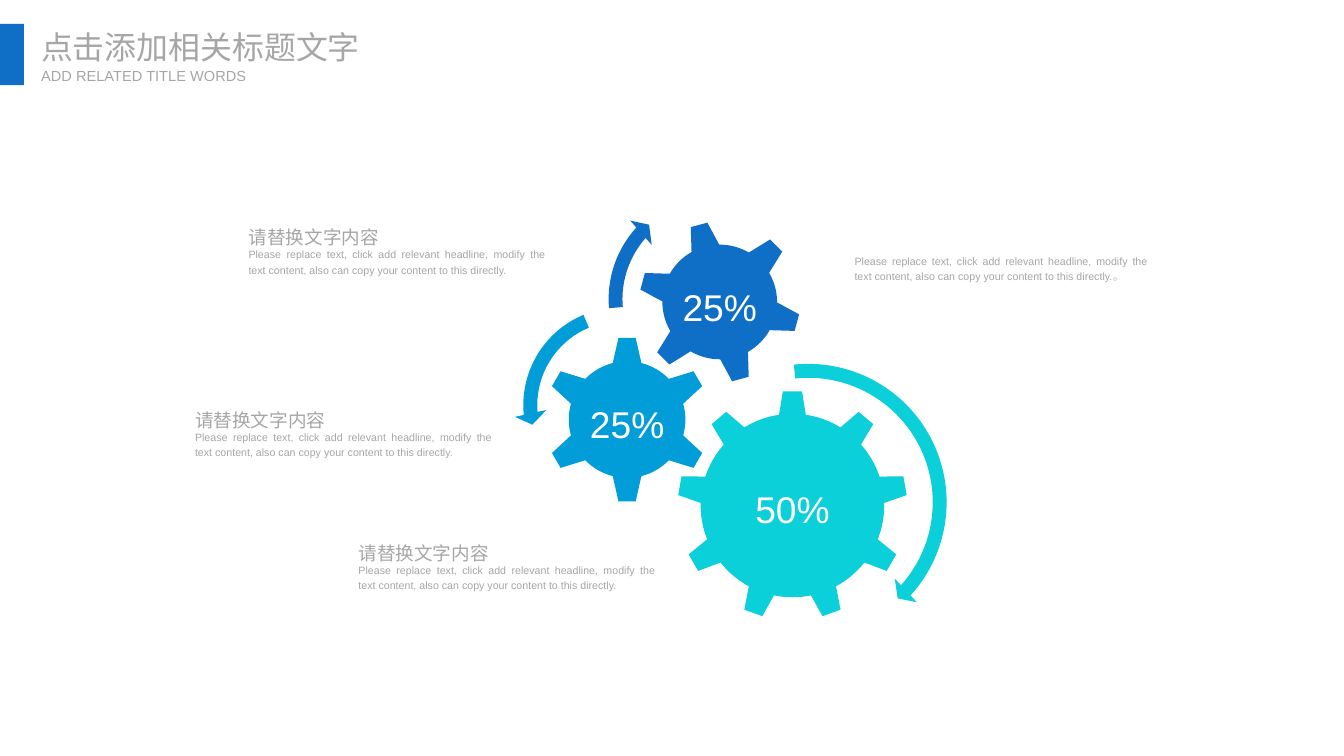
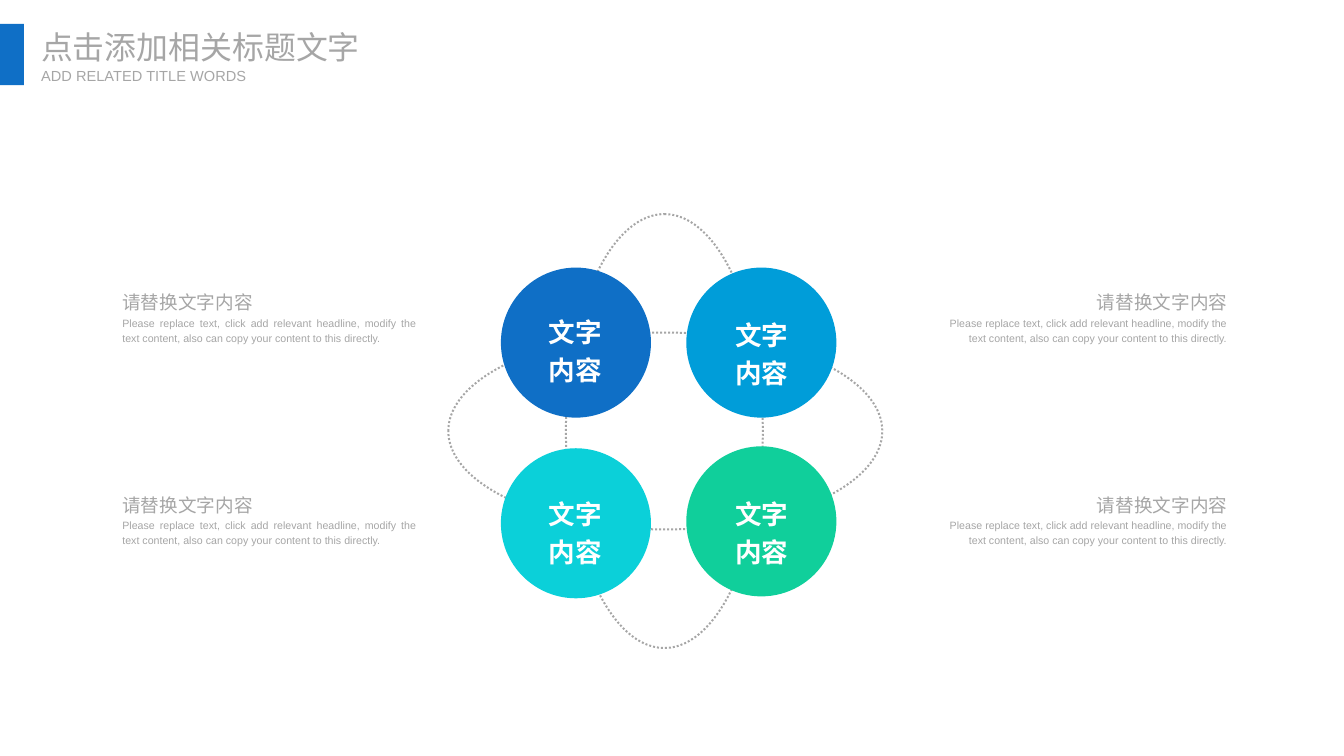
import math

import pptx
import pptx.dml.color
import pptx.enum.dml
import pptx.enum.shapes
import pptx.enum.text
import pptx.util

SHAPE = pptx.enum.shapes.MSO_SHAPE
ALIGN = pptx.enum.text.PP_ALIGN
ANCHOR = pptx.enum.text.MSO_ANCHOR
QN = pptx.oxml.ns.qn

PX = 9144  # EMU per px, 100 px to the inch
SLIDE_SIZE = (1406, 791)
COLORS = {"blue": "0F6FC6", "sky": "009DD9", "teal": "0BD0D9",
          "green": "10CF9B", "gray": "A6A6A6", "white": "FFFFFF"}
LATIN, CJK = "Arial", "Noto Sans CJK SC"

# Content
TITLE = "点击添加相关标题文字"
SUBTITLE = "ADD RELATED TITLE WORDS"
HEADING = "请替换文字内容"
BODY = ("Please replace text, click add relevant headline, modify the text content, "
        "also can copy your content to this directly.")
CIRCLE_LABEL = "文字内容"

# label, color, center, teeth, first tooth angle, body radius, tip radius, root and tip half widths
GEARS = [
    ("50%", "teal", (829, 529), 9, 0, 96, 120, 14, 10),
    ("25%", "sky", (656, 439), 6, 0, 61, 86, 15, 9),
    ("25%", "blue", (753, 316), 6, -15, 60, 84, 15, 9),
]
# preset, color, left, top, size, thickness %, head angle, end angle, start angle, head width %
ARROWS = [
    (SHAPE.CIRCULAR_ARROW, "teal", 691, 371, 309, 4.7, 4.98, 42.09, 264.03, 5.5),
    (SHAPE.LEFT_CIRCULAR_ARROW, "sky", 538, 312, 224, 6.5, 7.17, 174.82, 247.3, 7.5),
    (SHAPE.CIRCULAR_ARROW, "blue", 627, 192, 242, 6, 6.57, 221.9, 175.14, 7),
]
# left, top of the captions beside the gears
GEAR_CAPTIONS = [(260, 232), (204, 423), (375, 562)]
# color, circle left and top, label center and top
CIRCLES = [
    ("blue", 524, 280, 602, 319),
    ("sky", 718, 280, 797, 322),
    ("green", 718, 467, 797, 509),
    ("teal", 524, 469, 602, 509),
]
# heading top, body top
CAPTION_ROWS = [(300, 329), (512, 540)]
CAPTION_COLUMNS = [(128, 308, ALIGN.JUSTIFY), (982, 302, ALIGN.RIGHT)]


def px(*lengths):
    return [pptx.util.Emu(round(length * PX)) for length in lengths]


def rgb(color):
    return pptx.dml.color.RGBColor.from_string(COLORS[color])


def write(frame, text, size=8, color="gray", align=ALIGN.LEFT, spacing=1.2,
          font=LATIN, bold=False, wrap=True, anchor=ANCHOR.TOP):
    frame.margin_left = frame.margin_right = frame.margin_top = frame.margin_bottom = 0
    frame.word_wrap = wrap
    frame.auto_size = pptx.enum.text.MSO_AUTO_SIZE.NONE
    frame.vertical_anchor = anchor
    paragraph = frame.paragraphs[0]
    paragraph.alignment, paragraph.line_spacing = align, spacing
    run = paragraph.add_run()
    run.text = text
    run.font.size, run.font.bold, run.font.name = pptx.util.Pt(size), bold, font
    run.font.color.rgb = rgb(color)
    east_asian = run.font._element.makeelement(QN("a:ea"), {"typeface": font})
    run.font._element.append(east_asian)


def add_text(slide, box, text, **fmt):
    write(slide.shapes.add_textbox(*px(*box)).text_frame, text, **fmt)


def paint(shape, color):
    shape.shadow.inherit = False
    shape.fill.solid()
    shape.fill.fore_color.rgb = rgb(color)
    shape.line.fill.background()
    return shape


def add_filled(slide, preset, box, color):
    return paint(slide.shapes.add_shape(preset, *px(*box)), color)


def add_caption(slide, left, top, width, body_top, align=ALIGN.JUSTIFY):
    add_text(slide, (left, top, width, 28), HEADING, size=14, align=align)
    add_text(slide, (left, body_top, width, 31), BODY, align=align)


def bend(segment, start, radius, start_angle, arc):
    """Turn a straight segment into a clockwise arc; return its end point."""
    point = segment[0]
    end = int(point.get("x")), int(point.get("y"))
    reach = 4 / 3 * math.tan(math.radians(arc) / 4) * radius * PX
    segment.tag = QN("a:cubicBezTo")
    controls = ((start, start_angle, reach), (end, start_angle + arc, -reach))
    for index, ((x, y), angle, length) in enumerate(controls):
        turn = math.radians(angle)
        control = point.makeelement(QN("a:pt"), {
            "x": str(round(x + length * math.cos(turn))),
            "y": str(round(y + length * math.sin(turn)))})
        segment.insert(index, control)


def add_gear(slide, label, color, center, teeth, first, body, tip, root_half, tip_half):
    step = 360 / teeth
    root_angle = math.degrees(math.asin(root_half / body))
    tip_angle = math.degrees(math.asin(tip_half / tip))
    outline = []
    for tooth in range(teeth):
        middle = first + tooth * step
        outline += [(tip, middle - tip_angle), (tip, middle + tip_angle),
                    (body, middle + root_angle), (body, middle + step - root_angle)]
    points = [px(center[0] + radius * math.sin(math.radians(angle)),
                 center[1] - radius * math.cos(math.radians(angle)))
              for radius, angle in outline]
    builder = slide.shapes.build_freeform(*points[0])
    builder.add_line_segments(points[1:], close=True)
    gear = paint(builder.convert_to_shape(), color)
    # Round the body between the teeth
    segments = list(gear._element.iter(QN("a:lnTo")))
    for tooth in range(teeth):
        root, valley = segments[4 * tooth + 1:4 * tooth + 3]
        start = int(root[0].get("x")), int(root[0].get("y"))
        bend(valley, start, body, first + tooth * step + root_angle, step - 2 * root_angle)
    write(gear.text_frame, label, size=28, color="white", align=ALIGN.CENTER,
          anchor=ANCHOR.MIDDLE)


def add_titled_slide(deck):
    slide = deck.slides.add_slide(deck.slide_layouts[5])
    add_filled(slide, SHAPE.RECTANGLE, (0, 25, 25, 64), "blue")
    title = slide.shapes.title
    title.left, title.top, title.width, title.height = px(43, 29, 337, 40)
    write(title.text_frame, TITLE, size=24, spacing=1.0, font=CJK, wrap=False)
    add_text(slide, (43, 70, 218, 19), SUBTITLE, size=11, spacing=1.0, wrap=False)
    return slide


def build_gears(deck):
    slide = add_titled_slide(deck)
    for gear in GEARS:
        add_gear(slide, *gear)
    for preset, color, left, top, size, thick, head, end, start, head_width in ARROWS:
        arrow = add_filled(slide, preset, (left, top, size, size), color)
        # Angles are stored in 60000ths of a degree, adjustments in 100000ths
        values = (thick / 100, head * 0.6, end * 0.6, start * 0.6, head_width / 100)
        for index, value in enumerate(values):
            arrow.adjustments[index] = value
    for left, top in GEAR_CAPTIONS:
        add_caption(slide, left, top, 311, top + 25)
    add_text(slide, (894, 264, 307, 31), BODY + "。", align=ALIGN.JUSTIFY)


def build_circles(deck):
    slide = add_titled_slide(deck)
    # Dotted orbits
    for left, rotation in ((469, 0), (468, 90)):
        orbit = slide.shapes.add_shape(SHAPE.OVAL, *px(left, 348, 454, 206))
        orbit.shadow.inherit = False
        orbit.rotation = rotation
        orbit.fill.background()
        orbit.line.color.rgb = rgb("gray")
        orbit.line.width = pptx.util.Pt(1.5)
        orbit.line.dash_style = pptx.enum.dml.MSO_LINE.ROUND_DOT
    # Circles and their labels
    for color, left, top, _, _ in CIRCLES:
        add_filled(slide, SHAPE.OVAL, (left, top, 157, 157), color)
    for _, _, _, center, top in CIRCLES:
        add_text(slide, (center - 33, top + 5, 66, 81), CIRCLE_LABEL, size=20,
                 color="white", bold=True, align=ALIGN.CENTER)
    # Captions on both sides
    for top, body_top in CAPTION_ROWS:
        for left, width, align in CAPTION_COLUMNS:
            add_caption(slide, left, top, width, body_top, align)


def main():
    deck = pptx.Presentation()
    deck.slide_width, deck.slide_height = px(*SLIDE_SIZE)
    build_gears(deck)
    build_circles(deck)
    deck.save("out.pptx")


if __name__ == "__main__":
    main()
